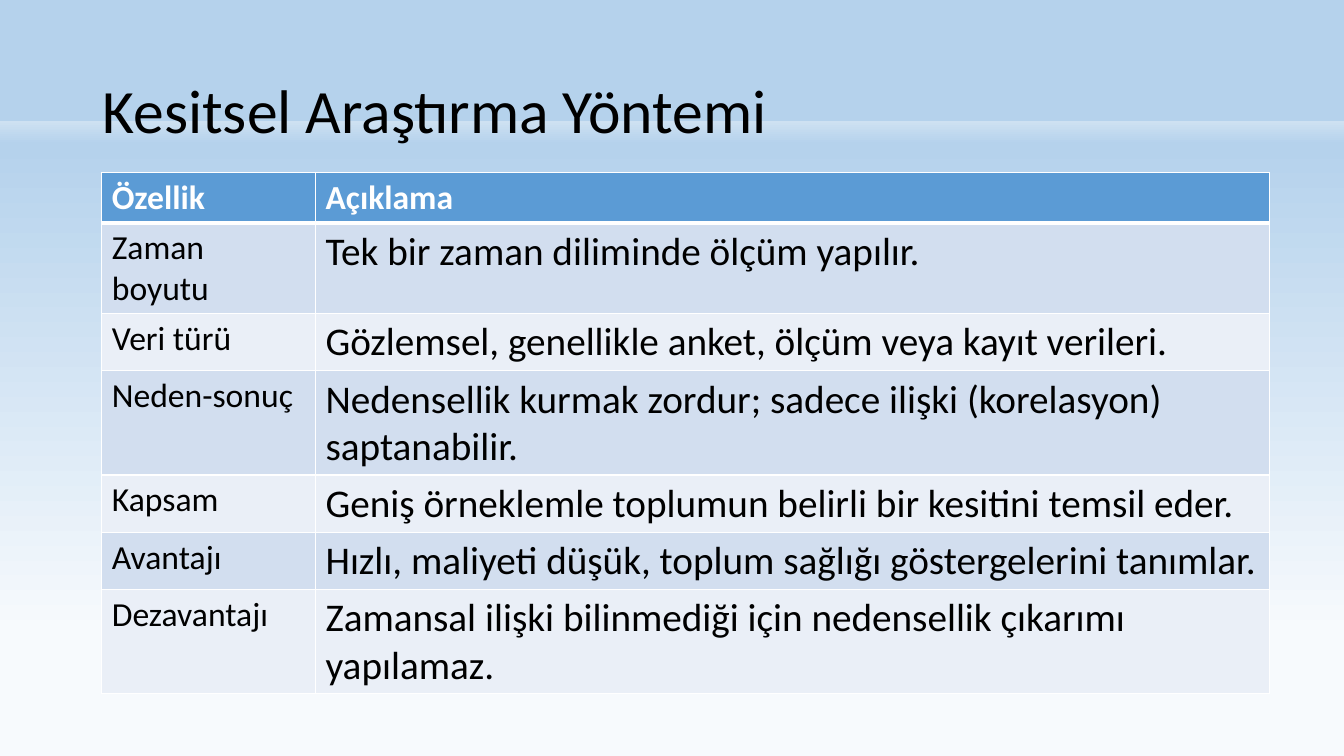
from lxml import etree
from pptx import Presentation
from pptx.dml.color import RGBColor
from pptx.enum.text import MSO_ANCHOR
from pptx.oxml.ns import qn
from pptx.util import Inches, Pt

MIDDLE = MSO_ANCHOR.MIDDLE

BLACK = RGBColor(0x00, 0x00, 0x00)
WHITE = RGBColor(0xFF, 0xFF, 0xFF)
HEADER_BLUE = RGBColor(0x5B, 0x9B, 0xD5)
BAND_DARK = RGBColor(0xD2, 0xDE, 0xEF)
BAND_LIGHT = RGBColor(0xEA, 0xEF, 0xF7)
SKY = RGBColor(0xB5, 0xD2, 0xEC)
HORIZON = RGBColor(0xCE, 0xE1, 0xF2)
MIST = RGBColor(0xF7, 0xFA, 0xFD)

BACKGROUND_STOPS = [(16, SKY), (16, HORIZON), (19, SKY), (84, MIST)]
COLUMN_WIDTHS = [2.12, 9.46]
ROW_HEIGHT = 0.41
ROWS = [
    ("Özellik", "Açıklama"),
    ("Zaman boyutu", "Tek bir zaman diliminde ölçüm yapılır."),
    ("Veri türü", "Gözlemsel, genellikle anket, ölçüm veya kayıt verileri."),
    ("Neden-sonuç", "Nedensellik kurmak zordur; sadece ilişki (korelasyon) saptanabilir."),
    ("Kapsam", "Geniş örneklemle toplumun belirli bir kesitini temsil eder."),
    ("Avantajı", "Hızlı, maliyeti düşük, toplum sağlığı göstergelerini tanımlar."),
    ("Dezavantajı", "Zamansal ilişki bilinmediği için nedensellik çıkarımı yapılamaz."),
]


class SlideBuilder:
    def __init__(self, slide, font="Calibri"):
        self.slide = slide
        self.font = font

    def background(self, stops):
        fill = self.slide.background.fill
        fill.gradient()
        fill.gradient_angle = 270
        stop_list = self.slide.element.find(".//" + qn("a:gsLst"))
        for old_stop in list(stop_list):
            stop_list.remove(old_stop)
        for percent, color in stops:
            stop = etree.SubElement(stop_list, qn("a:gs"), pos=str(percent * 1000))
            etree.SubElement(stop, qn("a:srgbClr"), val=str(color))

    def run(self, paragraph, text, size, color, bold=False):
        run = paragraph.add_run()
        run.text = text
        run.font.name = self.font
        run.font.size = Pt(size)
        run.font.bold = bold
        run.font.color.rgb = color

    def title(self, text, left, top, width, height):
        box = self.slide.shapes.add_textbox(
            Inches(left), Inches(top), Inches(width), Inches(height))
        frame = box.text_frame
        frame.word_wrap = True
        frame.vertical_anchor = MIDDLE
        paragraph = frame.paragraphs[0]
        paragraph.line_spacing = 0.9
        self.run(paragraph, text, 44, BLACK)

    def borders(self, cell, bottom_width):
        properties = cell._tc.get_or_add_tcPr()
        widths = {"a:lnL": 1, "a:lnR": 1, "a:lnT": 1, "a:lnB": bottom_width}
        for position, (tag, width) in enumerate(widths.items()):
            line = etree.Element(qn(tag), w=str(Pt(width)))
            solid = etree.SubElement(line, qn("a:solidFill"))
            etree.SubElement(solid, qn("a:srgbClr"), val=str(WHITE))
            properties.insert(position, line)

    def table(self, rows, left, top, column_widths, row_height):
        table = self.slide.shapes.add_table(
            len(rows), len(column_widths), Inches(left), Inches(top),
            Inches(sum(column_widths)), Inches(row_height * len(rows))).table
        for column, width in zip(table.columns, column_widths):
            column.width = Inches(width)
        for row_index, texts in enumerate(rows):
            header = row_index == 0
            band = BAND_DARK if row_index % 2 else BAND_LIGHT
            for column_index, text in enumerate(texts):
                cell = table.cell(row_index, column_index)
                cell.fill.solid()
                cell.fill.fore_color.rgb = HEADER_BLUE if header else band
                self.borders(cell, 3 if header else 1)
                size = 24 if header or column_index == 0 else 28
                self.run(cell.text_frame.paragraphs[0], text, size,
                         WHITE if header else BLACK, header)


def main():
    presentation = Presentation()
    presentation.slide_width = Inches(13.33)
    presentation.slide_height = Inches(7.5)
    builder = SlideBuilder(presentation.slides.add_slide(presentation.slide_layouts[6]))

    # Background and title
    builder.background(BACKGROUND_STOPS)
    builder.title("Kesitsel Araştırma Yöntemi", 0.92, 0.4, 11.5, 1.45)

    # Table of features; rows grow to fit their text
    builder.table(ROWS, 1.01, 1.71, COLUMN_WIDTHS, ROW_HEIGHT)

    presentation.save("out.pptx")


if __name__ == "__main__":
    main()
